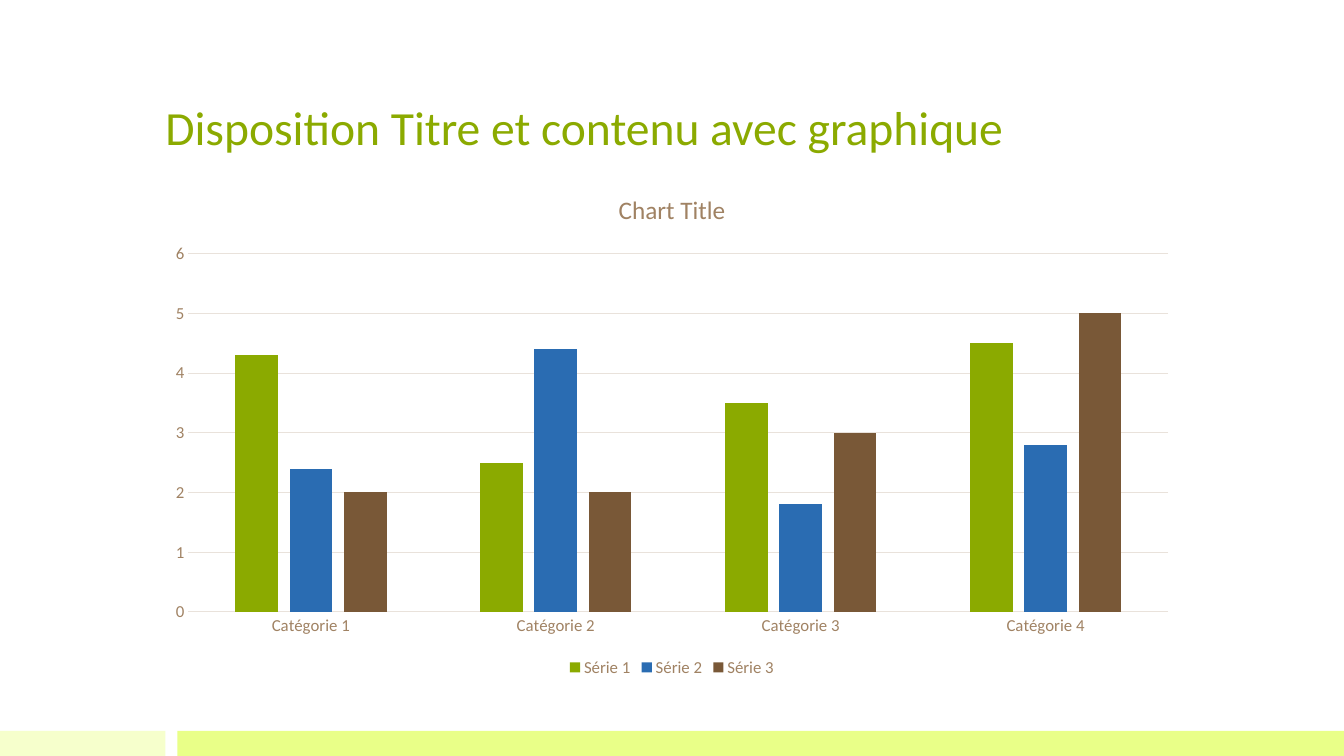
"""Build a title and clustered column chart slide."""
from pptx import Presentation
from pptx.chart.data import CategoryChartData
from pptx.dml.color import RGBColor
from pptx.enum.chart import XL_CHART_TYPE, XL_LEGEND_POSITION, XL_TICK_MARK
from pptx.enum.shapes import MSO_SHAPE
from pptx.enum.text import MSO_ANCHOR, MSO_AUTO_SIZE, PP_ALIGN
from pptx.util import Inches, Pt

GREEN, BLUE, BROWN = "8BAA00", "2A6CB2", "795837"
LABEL, RULE = "A08263", "E9E2DB"


def color(value):
    return RGBColor.from_string(value)


def write(frame, text, size, fill, align=PP_ALIGN.LEFT):
    para = frame.paragraphs[0]
    para.alignment = align
    span = para.add_run()
    span.text = text
    span.font.name = "Calibri"
    span.font.size = Pt(size)
    span.font.bold = False
    span.font.color.rgb = color(fill)


deck = Presentation()
deck.slide_width, deck.slide_height = Inches(13.33), Inches(7.5)
page = deck.slides.add_slide(deck.slide_layouts[5])

for left, width, fill in [(0, 1.64, "F6FFCC"), (1.76, 11.57, "E9FF88")]:
    band = page.shapes.add_shape(
        MSO_SHAPE.RECTANGLE, Inches(left), Inches(7.25), Inches(width), Inches(0.25))
    band.shadow.inherit = False
    band.fill.solid()
    band.fill.fore_color.rgb = color(fill)
    band.line.fill.background()

title = page.shapes.title
title.left, title.top = Inches(1.54), Inches(0.3)
title.width, title.height = Inches(10.25), Inches(1.29)
title.text_frame.word_wrap = True
title.text_frame.auto_size = MSO_AUTO_SIZE.NONE
title.text_frame.vertical_anchor = MSO_ANCHOR.BOTTOM
write(title.text_frame, "Disposition Titre et contenu avec graphique", size=34, fill=GREEN)

series_rows = [
    ("Série 1", (4.3, 2.5, 3.5, 4.5), GREEN),
    ("Série 2", (2.4, 4.4, 1.8, 2.8), BLUE),
    ("Série 3", (2, 2, 3, 5), BROWN),
]
data = CategoryChartData()
data.categories = [f"Catégorie {number}" for number in range(1, 5)]
for name, values, fill in series_rows:
    data.add_series(name, values)
chart = page.shapes.add_chart(
    XL_CHART_TYPE.COLUMN_CLUSTERED,
    Inches(1.54), Inches(1.71), Inches(10.25), Inches(5.05), data).chart

chart.has_title = True
write(chart.chart_title.text_frame, "Chart Title", size=18, fill=LABEL, align=PP_ALIGN.CENTER)
chart.chart_title.include_in_layout = False
chart.has_legend = True
chart.legend.position = XL_LEGEND_POSITION.BOTTOM
chart.legend.include_in_layout = False

category_axis, value_axis = chart.category_axis, chart.value_axis
for font in (chart.font, chart.legend.font,
             category_axis.tick_labels.font, value_axis.tick_labels.font):
    font.name = "Calibri"
    font.size = Pt(12)
    font.color.rgb = color(LABEL)
for axis in (category_axis, value_axis):
    axis.major_tick_mark = XL_TICK_MARK.NONE
    axis.minor_tick_mark = XL_TICK_MARK.NONE
value_axis.minimum_scale, value_axis.maximum_scale = 0, 6
value_axis.major_unit = 1
value_axis.format.line.fill.background()
for line in (category_axis.format.line, value_axis.major_gridlines.format.line):
    line.color.rgb = color(RULE)
    line.width = Pt(0.75)

plot = chart.plots[0]
plot.gap_width, plot.overlap = 219, -27
plot.vary_by_categories = False
for series, (name, values, fill) in zip(plot.series, series_rows):
    series.format.fill.solid()
    series.format.fill.fore_color.rgb = color(fill)

deck.save("out.pptx")
